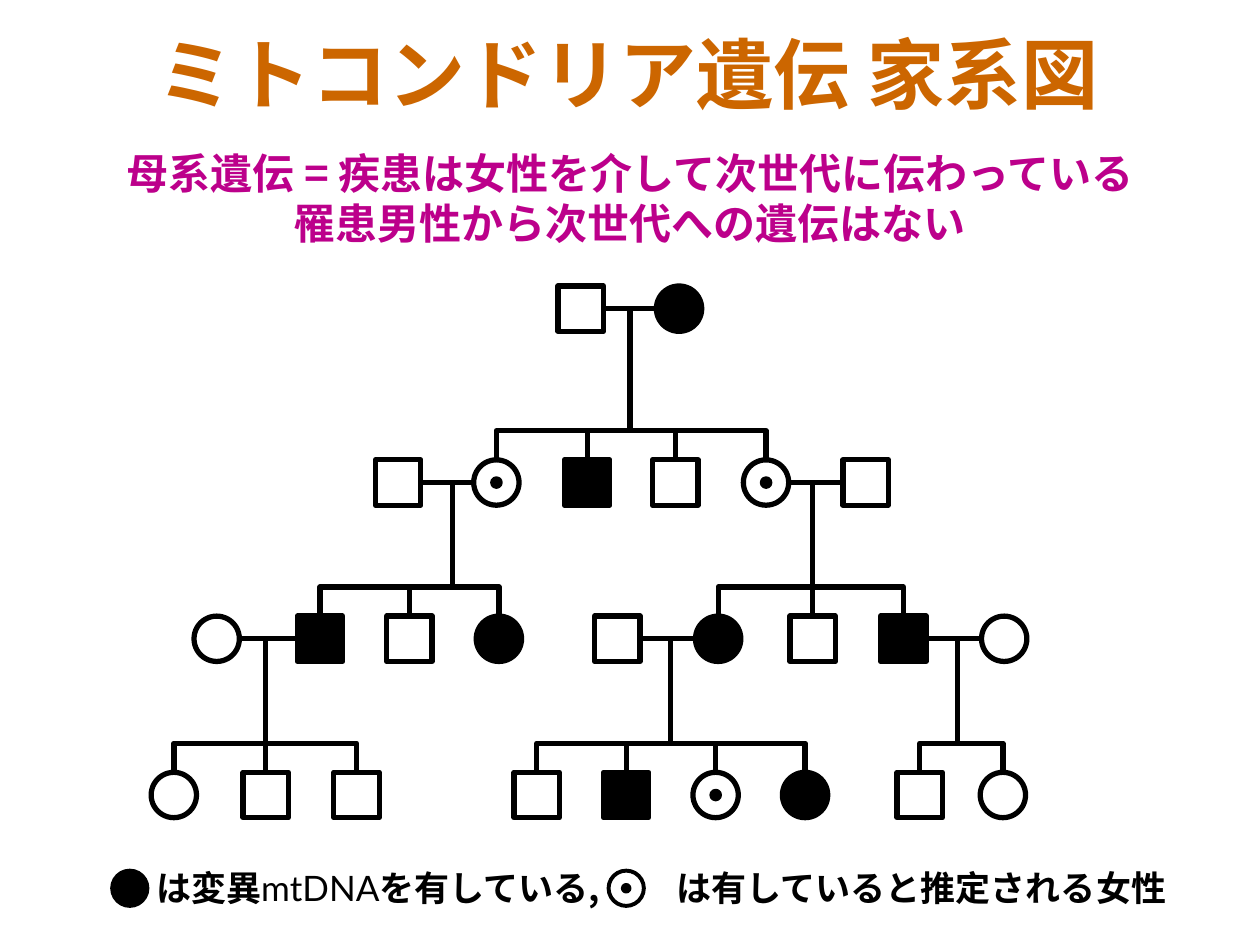
from lxml import etree
from pptx import Presentation
from pptx.dml.color import RGBColor
from pptx.enum.shapes import MSO_CONNECTOR, MSO_SHAPE
from pptx.enum.text import MSO_ANCHOR, PP_ALIGN
from pptx.oxml.ns import qn
from pptx.util import Inches, Pt

SQUARE, CIRCLE = MSO_SHAPE.RECTANGLE, MSO_SHAPE.OVAL
STRAIGHT, ELBOW = MSO_CONNECTOR.STRAIGHT, MSO_CONNECTOR.ELBOW
LEFT, CENTER = PP_ALIGN.LEFT, PP_ALIGN.CENTER
TOP, MIDDLE = MSO_ANCHOR.TOP, MSO_ANCHOR.MIDDLE
BLACK, WHITE = RGBColor(0, 0, 0), RGBColor(255, 255, 255)
ORANGE, MAGENTA = RGBColor(0xCC, 0x66, 0x00), RGBColor(0xBC, 0x00, 0x8B)
JAPANESE, LATIN = "Noto Sans CJK JP", "Lato"

TITLE = [[("ミトコンドリア遺伝 家系図", JAPANESE)]]
SUBTITLE = [[("母系遺伝 = 疾患は女性を介して次世代に伝わっている", JAPANESE)],
            [("罹患男性から次世代への遺伝はない", JAPANESE)]]
LEGEND = [[("は変異", JAPANESE), ("mtDNA", LATIN),
           ("を有している,\tは有していると推定される女性", JAPANESE)]]

# One list per generation: (centre x, sex, status)
GENERATIONS = [
    [(4.61, "m", "healthy"), (5.39, "f", "affected")],
    [(3.16, "m", "healthy"), (3.94, "f", "carrier"), (4.66, "m", "affected"),
     (5.36, "m", "healthy"), (6.08, "f", "carrier"), (6.87, "m", "healthy")],
    [(1.72, "f", "healthy"), (2.54, "m", "affected"), (3.25, "m", "healthy"),
     (3.96, "f", "affected"), (4.9, "m", "healthy"), (5.7, "f", "affected"),
     (6.45, "m", "healthy"), (7.17, "m", "affected"), (7.97, "f", "healthy")],
    [(1.38, "f", "healthy"), (2.11, "m", "healthy"), (2.83, "m", "healthy"),
     (4.26, "m", "healthy"), (4.97, "m", "affected"), (5.68, "f", "carrier"),
     (6.39, "f", "affected"), (7.3, "m", "healthy"), (7.96, "f", "healthy")],
]
# (generation, left parent, right parent, descent x, first child, last child)
FAMILIES = [
    (0, 0, 1, 5.0, 1, 4),
    (1, 0, 1, 3.59, 1, 3),
    (1, 4, 5, 6.45, 5, 7),
    (2, 0, 1, 2.11, 0, 2),
    (2, 4, 5, 5.32, 3, 6),
    (2, 7, 8, 7.6, 7, 8),
]
ROW_CENTERS = [2.45, 3.83, 5.07, 6.31]
SIZE, DROP = 0.36, 0.24
HAIR = 0.01  # height of the elbow's own frame, which its bend exceeds


def write(frame, paragraphs, size, color, align, anchor):
    frame.word_wrap = True
    frame.vertical_anchor = anchor
    for index, runs in enumerate(paragraphs):
        para = frame.paragraphs[0] if index == 0 else frame.add_paragraph()
        para.alignment = align
        para.line_spacing = Pt(size * 1.2)
        para.space_before = Pt(0)
        for text, font_name in runs:
            span = para.add_run()
            span.text = text
            font_format = {"name": font_name, "size": Pt(size),
                           "bold": font_name == JAPANESE}
            for key, value in font_format.items():
                setattr(span.font, key, value)
            span.font.color.rgb = color
            east_asian = etree.SubElement(span.font._element, qn("a:ea"))
            east_asian.set("typeface", font_name)


def add_symbol(kind, x, y, size, fill, weight):
    """Draw a square or circle centred on (x, y)."""
    shape = page.shapes.add_shape(kind, Inches(x - size / 2), Inches(y - size / 2),
                                  Inches(size), Inches(size))
    shape.shadow.inherit = False
    shape.fill.solid()
    shape.fill.fore_color.rgb = fill
    shape.line.color.rgb = BLACK
    shape.line.width = Pt(weight)
    return shape


def add_person(x, y, sex, status, size=SIZE, weight=3):
    person = add_symbol(SQUARE if sex == "m" else CIRCLE, x, y, size,
                        BLACK if status == "affected" else WHITE, weight)
    if status == "carrier":
        add_symbol(CIRCLE, x, y, size * 0.2, BLACK, 2)
    return person


def add_line(x1, y1, x2, y2, kind=STRAIGHT):
    line = page.shapes.add_connector(kind, Inches(x1), Inches(y1), Inches(x2), Inches(y2))
    line.line.color.rgb = BLACK
    line.line.width = Pt(3)
    etree.SubElement(line._element.spPr, qn("a:effectLst"))
    return line


def add_sibling_bar(left, right, y):
    """Bracket rising by DROP from (left, y) and falling to (right, y)."""
    middle, span = (left + right) / 2, right - left
    bar = add_line(middle - HAIR / 2, y - span / 2, middle + HAIR / 2, y + span / 2, ELBOW)
    properties = bar._element.spPr
    frame = properties.find(qn("a:xfrm"))
    for key, value in {"rot": "5400000", "flipH": "1", "flipV": "1"}.items():
        frame.set(key, value)
    adjustments = properties.find(qn("a:prstGeom")).find(qn("a:avLst"))
    guide = etree.SubElement(adjustments, qn("a:gd"))
    guide.set("name", "adj1")
    guide.set("fmla", f"val {round(DROP / HAIR * 100000)}")


def add_family(generation, left, right, descent_x, first, last):
    y, child_y = ROW_CENTERS[generation:generation + 2]
    parents, children = GENERATIONS[generation], GENERATIONS[generation + 1]
    child_top = child_y - SIZE / 2
    bar_y = child_top - DROP

    marriage = add_line(parents[left][0] + SIZE / 2, y, parents[right][0] - SIZE / 2, y)
    if parents[left][1] == "m":
        marriage.begin_connect(symbols[generation][left], 3)
    if parents[right][1] == "m":
        marriage.end_connect(symbols[generation][right], 1)
    add_line(descent_x, y, descent_x, bar_y)
    add_sibling_bar(children[first][0], children[last][0], child_top)
    for child in range(first + 1, last):
        x = children[child][0]
        stem = add_line(x, bar_y, x, child_top)
        stem.end_connect(symbols[generation + 1][child], 0)


deck = Presentation()
deck.slide_width, deck.slide_height = Inches(10), Inches(7.5)
page = deck.slides.add_slide(deck.slide_layouts[5])

title = page.shapes.title
title.left, title.top, title.width, title.height = map(Inches, (0.06, 0.16, 9.86, 0.84))
write(title.text_frame, TITLE, 44, ORANGE, CENTER, MIDDLE)

subtitle = page.shapes.add_textbox(*map(Inches, (0.47, 1.12, 9.06, 0.91)))
write(subtitle.text_frame, SUBTITLE, 24, MAGENTA, CENTER, TOP)

symbols = [[add_person(x, y, sex, status) for x, sex, status in row]
           for row, y in zip(GENERATIONS, ROW_CENTERS)]
for family in FAMILIES:
    add_family(*family)

legend = page.shapes.add_textbox(*map(Inches, (1.14, 6.83, 8.44, 0.44)))
write(legend.text_frame, LEGEND, 20, BLACK, LEFT, TOP)
tabs = etree.SubElement(legend.text_frame.paragraphs[0]._p.get_or_add_pPr(), qn("a:tabLst"))
tab = etree.SubElement(tabs, qn("a:tab"))
tab.set("pos", str(Inches(4.13)))
tab.set("algn", "l")
for x, status in ((1.03, "affected"), (4.97, "carrier")):
    add_person(x, 7.05, "f", status, 0.28, 2.25)

deck.save("out.pptx")
